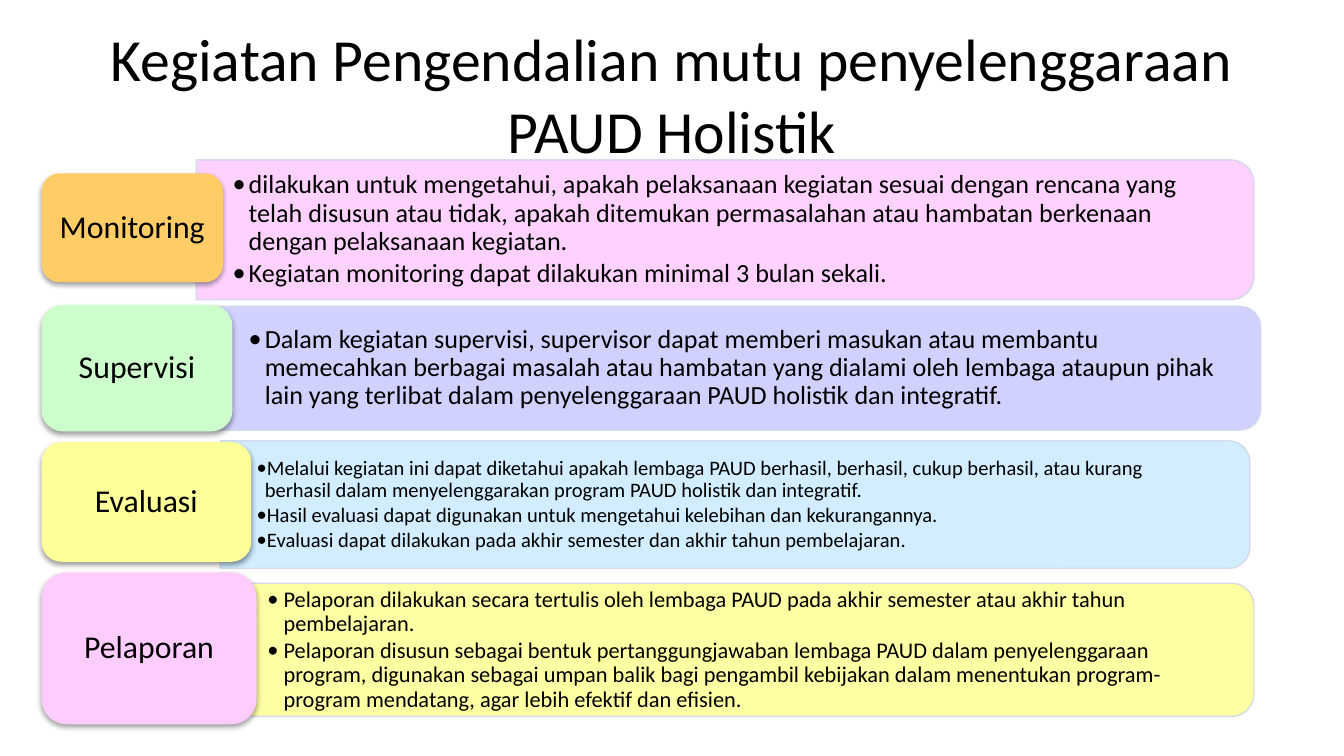
"""Build the slide on quality control activities for holistic PAUD."""
from dataclasses import dataclass

from lxml import etree
from pptx import Presentation
from pptx import util as u
from pptx.dml.color import RGBColor
from pptx.enum import shapes, text
from pptx.oxml.ns import qn

CELL = u.Inches(0.1)
COLUMNS, ROWS = 100, 56.25
LABEL_LEFT = 3.1


@dataclass(frozen=True)
class Theme:
    """Colours and type sizes of the slide."""
    font: str = "Calibri"
    ink: str = "000000"
    outline: str = "D0D8E8"
    orange: str = "FFCC66"
    green: str = "CCFFCC"
    yellow: str = "FFFF99"
    pink: str = "FFCCFF"
    lilac: str = "CCCCFF"
    sky: str = "CCECFF"
    title: int = 32
    label: int = 17
    large: int = 14
    medium: int = 12
    small: int = 11


THEME = Theme()


@dataclass(frozen=True)
class Activity:
    """One row: label and panel as (position, extent) spans in grid cells."""
    name: str
    label_fill: str
    label_width: float
    label_rows: tuple
    panel_fill: str
    panel_columns: tuple
    panel_rows: tuple
    size: int
    indent: float
    points: tuple


ACTIVITIES = (
    Activity("Monitoring", THEME.orange, 13.5, (12.9, 8.1),
             THEME.pink, (14.6, 78.7), (11.9, 10.4), THEME.large, 1.2, (
        "dilakukan untuk mengetahui, apakah pelaksanaan kegiatan sesuai dengan rencana yang "
        "telah disusun atau tidak, apakah ditemukan permasalahan atau hambatan berkenaan "
        "dengan pelaksanaan kegiatan.",
        "Kegiatan monitoring dapat dilakukan minimal 3 bulan sekali.")),
    Activity("Supervisi", THEME.green, 14.2, (22.7, 9.4),
             THEME.lilac, (15.8, 78), (22.8, 9.2), THEME.large, 1.2, (
        "Dalam kegiatan supervisi, supervisor dapat memberi masukan atau membantu "
        "memecahkan berbagai masalah atau hambatan yang dialami oleh lembaga ataupun pihak "
        "lain yang terlibat dalam penyelenggaraan PAUD holistik dan integratif.",)),
    Activity("Evaluasi", THEME.yellow, 15.6, (32.9, 8.9),
             THEME.sky, (16.4, 76.6), (32.8, 9.5), THEME.small, 0.6, (
        "Melalui kegiatan ini dapat diketahui apakah lembaga PAUD berhasil, berhasil, cukup "
        "berhasil, atau kurang berhasil dalam menyelenggarakan program PAUD holistik dan "
        "integratif.",
        "Hasil evaluasi dapat digunakan untuk mengetahui kelebihan dan kekurangannya.",
        "Evaluasi dapat dilakukan pada akhir semester dan akhir tahun pembelajaran.")),
    Activity("Pelaporan", THEME.pink, 16, (42.6, 11.3),
             THEME.yellow, (17.2, 76.1), (43.4, 9.9), THEME.medium, 1.2, (
        "Pelaporan dilakukan secara tertulis oleh lembaga PAUD pada akhir semester atau "
        "akhir tahun pembelajaran.",
        "Pelaporan disusun sebagai bentuk pertanggungjawaban lembaga PAUD dalam "
        "penyelenggaraan program, digunakan sebagai umpan balik bagi pengambil kebijakan "
        "dalam menentukan program-program mendatang, agar lebih efektif dan efisien.")),
)


def cells(*counts):
    """Turn counts of grid cells into lengths."""
    return [u.Emu(round(count * CELL)) for count in counts]


def set_frame(frame, side, edge):
    """Wrap and centre a text frame vertically with the given insets in cells."""
    frame.word_wrap = True
    frame.vertical_anchor = text.MSO_ANCHOR.MIDDLE
    frame.margin_left, frame.margin_right = cells(side, side)
    frame.margin_top, frame.margin_bottom = cells(edge, edge)


def set_font(paragraph, size):
    """Give a paragraph the theme's font and ink."""
    paragraph.font.name = THEME.font
    paragraph.font.size = u.Pt(size)
    paragraph.font.color.rgb = RGBColor.from_string(THEME.ink)


def write_centred(frame, words, size, spacing):
    """Write one centred paragraph."""
    paragraph = frame.paragraphs[0]
    paragraph.text = words
    paragraph.alignment = text.PP_ALIGN.CENTER
    paragraph.line_spacing = spacing
    set_font(paragraph, size)


def write_bullets(frame, points, size, indent):
    """Write bulleted paragraphs with a hanging indent."""
    for index, point in enumerate(points):
        paragraph = frame.add_paragraph() if index else frame.paragraphs[0]
        paragraph.text = point
        paragraph.alignment = text.PP_ALIGN.LEFT
        paragraph.line_spacing = 0.9
        paragraph.space_after = u.Pt(0.15 * size)
        properties = paragraph._p.get_or_add_pPr()
        hang, = cells(indent)
        properties.set("marL", str(hang))
        properties.set("indent", str(-hang))
        etree.SubElement(properties, qn("a:buFont"), typeface=THEME.font)
        etree.SubElement(properties, qn("a:buChar"), char="•")
        set_font(paragraph, size)


def add_block(slide, preset, box, colour):
    """Add a filled preset shape without shadow."""
    shape = slide.shapes.add_shape(preset, *cells(*box))
    shape.shadow.inherit = False
    shape.fill.solid()
    shape.fill.fore_color.rgb = RGBColor.from_string(colour)
    return shape


def add_title(slide, words):
    """Add the slide title."""
    box = slide.shapes.add_textbox(*cells(5, 2.25, COLUMNS - 10, 9.4))
    set_frame(box.text_frame, 1, 0.5)
    write_centred(box.text_frame, words, THEME.title, 1.0)


def add_panel(slide, activity):
    """Add a panel rounded on the right, with its bullets."""
    (left, width), (top, height) = activity.panel_columns, activity.panel_rows
    shift = (width - height) / 2
    panel = add_block(slide, shapes.MSO_SHAPE.ROUND_2_SAME_RECTANGLE,
                      (left + shift, top - shift, height, width), activity.panel_fill)
    panel.rotation = 90
    panel.line.color.rgb = RGBColor.from_string(THEME.outline)
    panel.line.width = u.Pt(0.75)
    for colour in panel.element.spPr.iter(qn("a:srgbClr")):
        etree.SubElement(colour, qn("a:alpha"), val="90000")
    box = slide.shapes.add_textbox(*cells(left, top + 0.5, width - 0.5, height - 1))
    set_frame(box.text_frame, 2.7, 1.4)
    write_bullets(box.text_frame, activity.points, activity.size, activity.indent)


def add_label(slide, activity):
    """Add a rounded label with a soft shadow below it."""
    top, height = activity.label_rows
    label = add_block(slide, shapes.MSO_SHAPE.ROUNDED_RECTANGLE,
                      (LABEL_LEFT, top, activity.label_width, height), activity.label_fill)
    label.line.fill.background()
    effects = label.element.spPr.find(qn("a:effectLst"))
    shadow = etree.SubElement(effects, qn("a:outerShdw"), blurRad=str(u.Pt(3.1)),
                              dist=str(u.Pt(1.6)), dir="5400000", rotWithShape="0")
    colour = etree.SubElement(shadow, qn("a:srgbClr"), val=THEME.ink)
    etree.SubElement(colour, qn("a:alpha"), val="38000")
    set_frame(label.text_frame, 0.7, 0.4)
    write_centred(label.text_frame, activity.name, THEME.label, 0.9)


def main():
    """Build and save the slide."""
    presentation = Presentation()
    presentation.slide_width, presentation.slide_height = cells(COLUMNS, ROWS)
    slide = presentation.slides.add_slide(presentation.slide_layouts[6])
    add_title(slide, "Kegiatan Pengendalian mutu penyelenggaraan PAUD Holistik")
    for activity in ACTIVITIES:
        add_panel(slide, activity)
        add_label(slide, activity)
    presentation.save("out.pptx")


if __name__ == "__main__":
    main()
